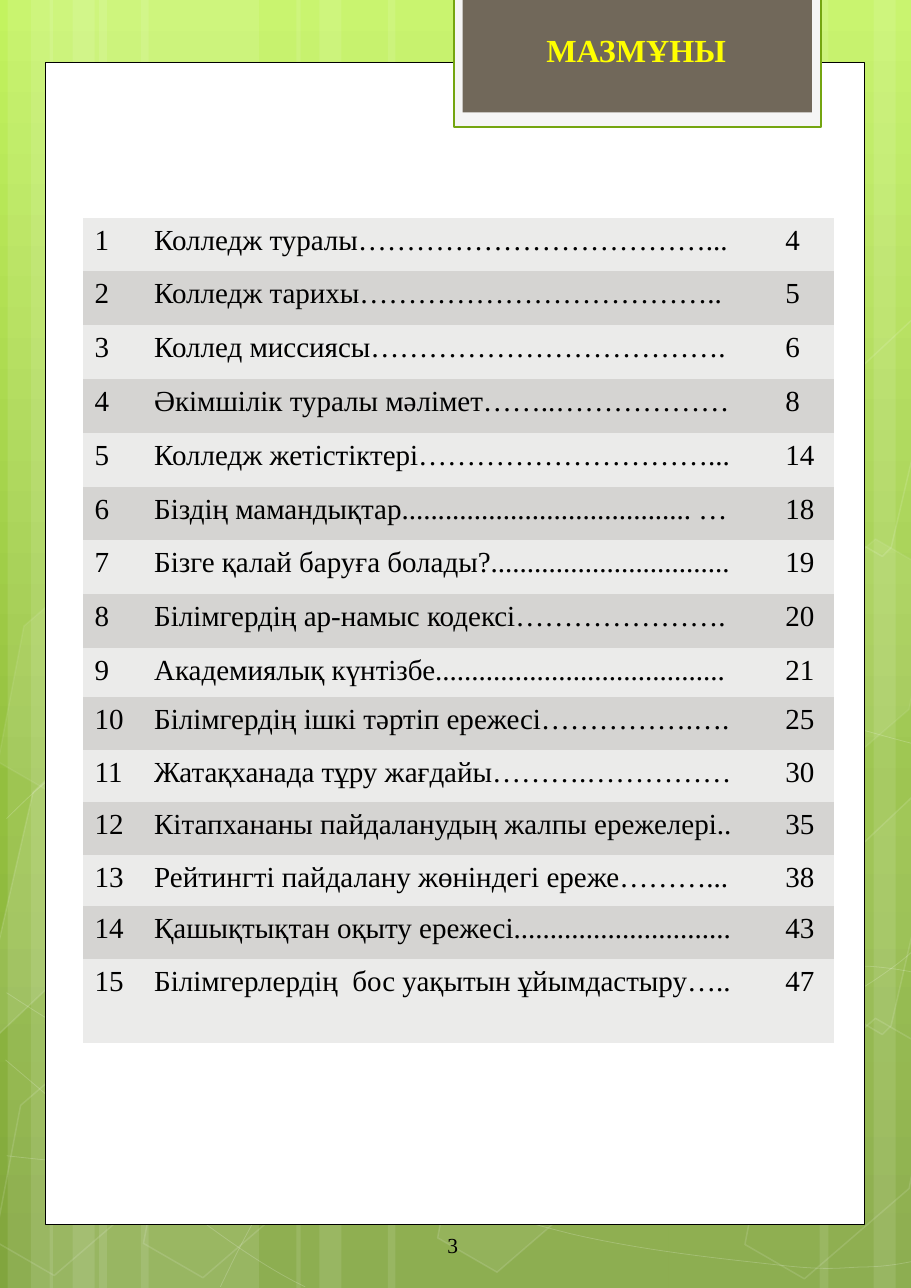
from copy import deepcopy
from lxml.etree import SubElement
from pptx import Presentation
from pptx.dml.color import RGBColor
from pptx.enum.shapes import MSO_SHAPE
from pptx.enum.text import MSO_ANCHOR, MSO_AUTO_SIZE, PP_ALIGN
from pptx.oxml.ns import qn
from pptx.util import Inches, Pt

WHITE = RGBColor(0xFF, 0xFF, 0xFF)
BLACK = RGBColor(0, 0, 0)
YELLOW = RGBColor(0xFF, 0xFF, 0)
GREEN = RGBColor(0x74, 0xA5, 0x10)
BROWN = RGBColor(0x71, 0x68, 0x5A)
PALE = RGBColor(0xF5, 0xF5, 0xF5)
LIGHT = RGBColor(0xEB, 0xEB, 0xEA)
DARK = RGBColor(0xD5, 0xD4, 0xD2)
FADE = [(0, RGBColor(0xC3, 0xF3, 0x5F)), (0.62, RGBColor(0x93, 0xBF, 0x3F)),
        (1, RGBColor(0x81, 0xA5, 0x3E))]
FONT = "Times New Roman"
PLAIN = "{2D5ABB26-0587-4C30-8999-92F81FD0307C}"

BANDS = [(0.9, 1.45), (0.07, 0.41), (0.28, 0.69), (1.28, 1.45), (0.45, 0.41), (0.66, 0.69),
         (6.07, 1.45), (7.93, 0.41), (7.44, 0.69), (3.52, 2.55), (2.69, 0.41), (2.9, 0.69)]

CURVES = [
    [(0.06, 10.49), (0.51, 10.54), (0.95, 10.59), (1.57, 10.57), (2.19, 10.55), (2.96, 10.53),
     (3.79, 10.37), (4.61, 10.21), (5.79, 9.92), (6.55, 9.62), (7.3, 9.32), (8.08, 8.85),
     (8.33, 8.59)],
    [(0.06, 7.43), (0.3, 7.19), (0.54, 6.96), (1, 6.72), (1.47, 6.49), (2.14, 6.15),
     (2.87, 6.03), (3.61, 5.92), (4.5, 5.91), (5.41, 6.03), (6.32, 6.16), (7.83, 6.64),
     (8.33, 6.76)],
    [(0.05, 9.62), (1.05, 10.47), (2.04, 11.33), (2.77, 11.68)],
    [(0.06, 9.01), (0.32, 9.18), (0.58, 9.35), (1.06, 9.6), (1.54, 9.84), (2.26, 10.22),
     (2.95, 10.49), (3.64, 10.76), (4.51, 11.03), (5.19, 11.2), (5.88, 11.36), (6.61, 11.43),
     (7.05, 11.48), (7.49, 11.53), (7.6, 11.51), (7.81, 11.5), (8.03, 11.5), (8.18, 11.47),
     (8.33, 11.44)],
    [(2, 11.68), (2.15, 11.37), (2.3, 11.06), (2.5, 10.77), (2.7, 10.49), (2.98, 10.18),
     (3.21, 9.96), (3.44, 9.75), (3.58, 9.66), (3.88, 9.5), (4.19, 9.34), (4.74, 9.12),
     (5.03, 9.01), (5.32, 8.91), (5.37, 8.91), (5.62, 8.87), (5.88, 8.83), (6.28, 8.79),
     (6.57, 8.77), (6.85, 8.75), (7.33, 8.77), (7.33, 8.77), (7.5, 8.77), (7.7, 8.77),
     (7.88, 8.77), (8.03, 8.78), (8.17, 8.8), (8.32, 8.83)],
]

HEXES = [(4.11, 9.18, 6, 12), (0.09, 9.21, None, 12), (0.12, 4.86, 7, 8),
         (1.44, 9.23, None, 12), (6.9, 9.24, None, 12), (6.9, 4.89, 7, 8)]

SHARDS = [
    ([(0.3, 7.19), (0.44, 7.06), (1.07, 7.43), (0.79, 8.63), (-0.11, 9.48), (-0.21, 9.42)], 10),
    ([(7.66, 7.82), (8.56, 6.97), (8.62, 7.01), (8.09, 9.31), (8.01, 9.39), (7.38, 9.02)], 4),
    ([(7.66, 3.48), (8.56, 2.64), (8.63, 2.67), (8.09, 4.97), (8.01, 5.05), (7.38, 4.69)], None),
]

ROWS = [
    ("Колледж туралы………………………………...", 4, 0.48),
    ("Колледж тарихы………………………………..", 5, 0.49),
    ("Коллед миссиясы……………………………….", 6, 0.49),
    ("Әкімшілік туралы мәлімет……..………………", 8, 0.49),
    ("Колледж жетістіктері…………………………...", 14, 0.49),
    ("Біздің мамандықтар........................................ …", 18, 0.48),
    ("Бізге қалай баруға болады?.................................", 19, 0.49),
    ("Білімгердің ар-намыс кодексі………………….", 20, 0.49),
    ("Академиялық күнтізбе........................................", 21, 0.45),
    ("Білімгердің ішкі тәртіп ережесі…………….….", 25, 0.48),
    ("Жатақханада тұру жағдайы……….……………", 30, 0.47),
    ("Кітапхананы пайдаланудың жалпы ережелері..", 35, 0.48),
    ("Рейтингті пайдалану жөніндегі ереже………...", 38, 0.47),
    ("Қашықтықтан оқыту ережесі..............................", 43, 0.48),
    ("Білімгерлердің  бос уақытын ұйымдастыру…..", 47, 0.76),
]


def tint(fill, color, alpha):
    fill.solid()
    fill.fore_color.rgb = color
    if alpha < 100:
        node = fill._xPr.find(".//" + qn("a:srgbClr"))
        SubElement(node, qn("a:alpha")).set("val", str(alpha * 1000))


def paint(shape, fill=None, alpha=100, line=None, width=1, clear=100):
    shape.shadow.inherit = False
    if fill is not None and alpha is not None:
        tint(shape.fill, fill, alpha)
    else:
        shape.fill.background()
    if line is not None:
        shape.line.width = Pt(width)
        tint(shape.line.fill, line, clear)
    else:
        shape.line.fill.background()


def block(slide, x, y, w, h, kind=MSO_SHAPE.RECTANGLE, **look):
    shape = slide.shapes.add_shape(kind, Inches(x), Inches(y), Inches(w), Inches(h))
    paint(shape, **look)
    return shape


def trace(slide, points, close=False, **look):
    spots = [(Inches(x), Inches(y)) for x, y in points]
    pen = slide.shapes.build_freeform(*spots[0])
    pen.add_line_segments(spots[1:], close=close)
    shape = pen.convert_to_shape()
    paint(shape, **look)
    return shape


def bend(shape):
    route = shape._element.find(".//" + qn("a:path"))
    lines = route.findall(qn("a:lnTo"))
    for i in range(0, len(lines), 3):
        curve = SubElement(route, qn("a:cubicBezTo"))
        for line in lines[i:i + 3]:
            curve.append(line[0])
            route.remove(line)


def write(frame, text, size=19, color=BLACK, bold=False, align=PP_ALIGN.LEFT):
    frame.text = str(text)
    line = frame.paragraphs[0]
    line.alignment = align
    font = line.runs[0].font
    font.name, font.size, font.bold = FONT, Pt(size), bold
    font.color.rgb = color


def inset(area):
    area.margin_left = area.margin_right = Inches(0.11)
    area.margin_top = area.margin_bottom = Inches(0.06)
    area.vertical_anchor = MSO_ANCHOR.TOP


def label(shape, text, x, y, w, h, wrap=True, **style):
    shape.left, shape.top, shape.width, shape.height = map(Inches, (x, y, w, h))
    frame = shape.text_frame
    frame.auto_size = MSO_AUTO_SIZE.NONE
    frame.word_wrap = wrap
    inset(frame)
    write(frame, text, align=PP_ALIGN.CENTER, **style)


def backdrop(slide):
    fill = slide.background.fill
    fill.gradient()
    fill.gradient_angle = 270
    stops = slide._element.find(".//" + qn("a:gsLst"))
    stops.append(deepcopy(stops[0]))
    for stop, (place, color) in zip(fill.gradient_stops, FADE):
        stop.position = place
        stop.color.rgb = color
    for x, w in BANDS:
        block(slide, x, 0, w, 11.69, fill=WHITE, alpha=10)
    for knots in CURVES:
        bend(trace(slide, knots, line=WHITE, width=0.5, clear=20))
    for x, y, alpha, clear in HEXES:
        hexa = block(slide, x, y, 1.45, 2.37, MSO_SHAPE.HEXAGON,
                     fill=WHITE, alpha=alpha, line=WHITE, clear=clear)
        hexa.adjustments[0] = 0.285
        hexa.rotation = 30
    for points, alpha in SHARDS:
        trace(slide, points, close=True, fill=WHITE, alpha=alpha, line=WHITE, clear=12)


def contents(slide):
    grid = slide.shapes.add_table(len(ROWS), 3, Inches(0.75), Inches(1.98),
                                  Inches(6.82), Inches(7.49)).table
    grid.first_row = grid.horz_banding = False
    grid._tbl.find(".//" + qn("a:tableStyleId")).text = PLAIN
    for col, width in zip(grid.columns, (0.54, 5.73, 0.55)):
        col.width = Inches(width)
    for i, (name, page, height) in enumerate(ROWS):
        grid.rows[i].height = Inches(height)
        for cell, text in zip(grid.rows[i].cells, (i + 1, name, page)):
            inset(cell)
            cell.fill.solid()
            cell.fill.fore_color.rgb = DARK if i % 2 else LIGHT
            write(cell.text_frame, text)


def main():
    deck = Presentation()
    deck.slide_width, deck.slide_height = Inches(8.27), Inches(11.69)
    slide = deck.slides.add_slide(deck.slide_layouts[5])
    backdrop(slide)
    block(slide, 0.41, 0.57, 7.44, 10.54, fill=WHITE, line=BLACK, width=0.5)
    block(slide, 4.12, -0.04, 3.33, 1.19, fill=PALE, line=GREEN, width=1.25)
    block(slide, 4.2, -0.04, 3.17, 1.06, fill=BROWN)
    number = slide.shapes.add_textbox(0, 0, 0, 0)
    label(number, "3", 3.63, 11.12, 0.96, 0.35, size=14)
    title = slide.shapes.title
    label(title, "МАЗМҰНЫ", 4.8, 0.22, 1.95, 0.47, wrap=False, size=21, color=YELLOW, bold=True)
    slide.shapes._spTree.append(title._element)
    contents(slide)
    deck.save("out.pptx")


if __name__ == "__main__":
    main()
